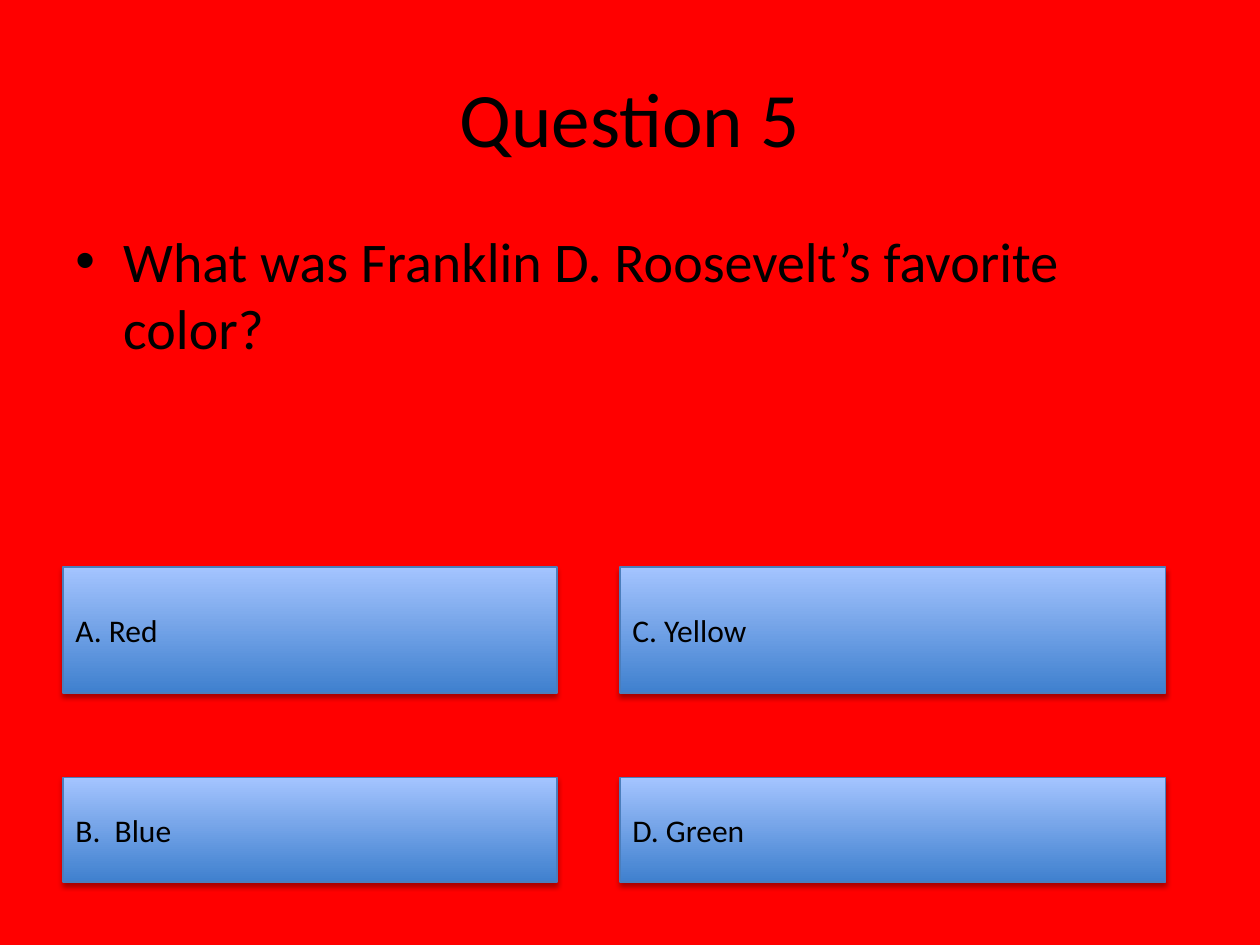
"""Build a quiz slide with a question and four answer buttons."""
from typing import NamedTuple

from lxml.etree import SubElement
from pptx import Presentation
from pptx.dml.color import RGBColor
from pptx.enum.shapes import MSO_SHAPE
from pptx.enum.text import MSO_ANCHOR, PP_ALIGN
from pptx.oxml.ns import qn
from pptx.util import Inches, Pt

RED = RGBColor(0xFF, 0x00, 0x00)
BLACK = RGBColor(0x00, 0x00, 0x00)
DEEP = RGBColor(0x3F, 0x80, 0xCE)
PALE = RGBColor(0xA4, 0xC4, 0xFF)
EDGE = RGBColor(0x4B, 0x7E, 0xBC)
FONT = {"name": "Calibri"}


class Span(NamedTuple):
    start: float
    size: float


class Answer(NamedTuple):
    text: str
    col: Span
    row: Span


LEFT, RIGHT = Span(0.5, 3.92), Span(4.92, 4.33)
UPPER, LOWER = Span(4.5, 1), Span(6.17, 0.83)
ANSWERS = [
    Answer("B.  Blue", LEFT, LOWER),
    Answer("D. Green", RIGHT, LOWER),
    Answer("A. Red", LEFT, UPPER),
    Answer("C. Yellow", RIGHT, UPPER),
]


def write(shape, text: str, size: int, align: PP_ALIGN, anchor: MSO_ANCHOR):
    frame = shape.text_frame
    frame.word_wrap = True
    frame.vertical_anchor = anchor
    para = frame.paragraphs[0]
    para.alignment = align
    run = para.add_run()
    run.text = text
    for key, value in {**FONT, "size": Pt(size)}.items():
        setattr(run.font, key, value)
    run.font.color.rgb = BLACK
    return para


def shade(shape) -> None:
    shape.shadow.inherit = False
    effects = shape.element.spPr.find(qn("a:effectLst"))
    outer = SubElement(effects, qn("a:outerShdw"), blurRad=str(Pt(3.1)),
                       dist=str(Pt(1.8)), dir="5400000", rotWithShape="0")
    color = SubElement(outer, qn("a:srgbClr"), val=str(BLACK))
    SubElement(color, qn("a:alpha"), val="35000")


def button(slide, answer: Answer) -> None:
    col, row = answer.col, answer.row
    shape = slide.shapes.add_shape(
        MSO_SHAPE.ACTION_BUTTON_CUSTOM, Inches(col.start), Inches(row.start),
        Inches(col.size), Inches(row.size))
    shape.fill.gradient()
    shape.fill.gradient_angle = 90
    for stop, color, place in zip(shape.fill.gradient_stops, (DEEP, PALE), (0, 1)):
        stop.color.rgb = color
        stop.position = place
    shape.line.color.rgb = EDGE
    shape.line.width = Pt(0.75)
    shade(shape)
    write(shape, answer.text, 18, PP_ALIGN.LEFT, MSO_ANCHOR.MIDDLE)


def label(slide, text: str, row: Span, size: int, align: PP_ALIGN, anchor: MSO_ANCHOR):
    box = slide.shapes.add_textbox(
        Inches(0.5), Inches(row.start), Inches(9), Inches(row.size))
    return write(box, text, size, align, anchor)


def bullet(para) -> None:
    para.space_before = Pt(6.4)
    props = para._p.get_or_add_pPr()
    indent = Inches(0.38)
    for key, value in {"marL": indent, "indent": -indent}.items():
        props.set(key, str(value))
    SubElement(props, qn("a:buFont"), typeface="Arial")
    SubElement(props, qn("a:buChar"), char="•")


def main() -> None:
    deck = Presentation()
    deck.slide_width, deck.slide_height = Inches(10), Inches(7.5)
    slide = deck.slides.add_slide(deck.slide_layouts[6])
    slide.background.fill.solid()
    slide.background.fill.fore_color.rgb = RED
    for answer in ANSWERS:
        button(slide, answer)
    label(slide, "Question 5", Span(0.3, 1.25), 44, PP_ALIGN.CENTER, MSO_ANCHOR.MIDDLE)
    bullet(label(slide, "What was Franklin D. Roosevelt’s favorite color?",
                 Span(1.75, 1.75), 32, PP_ALIGN.LEFT, MSO_ANCHOR.TOP))
    deck.save("out.pptx")


if __name__ == "__main__":
    main()
